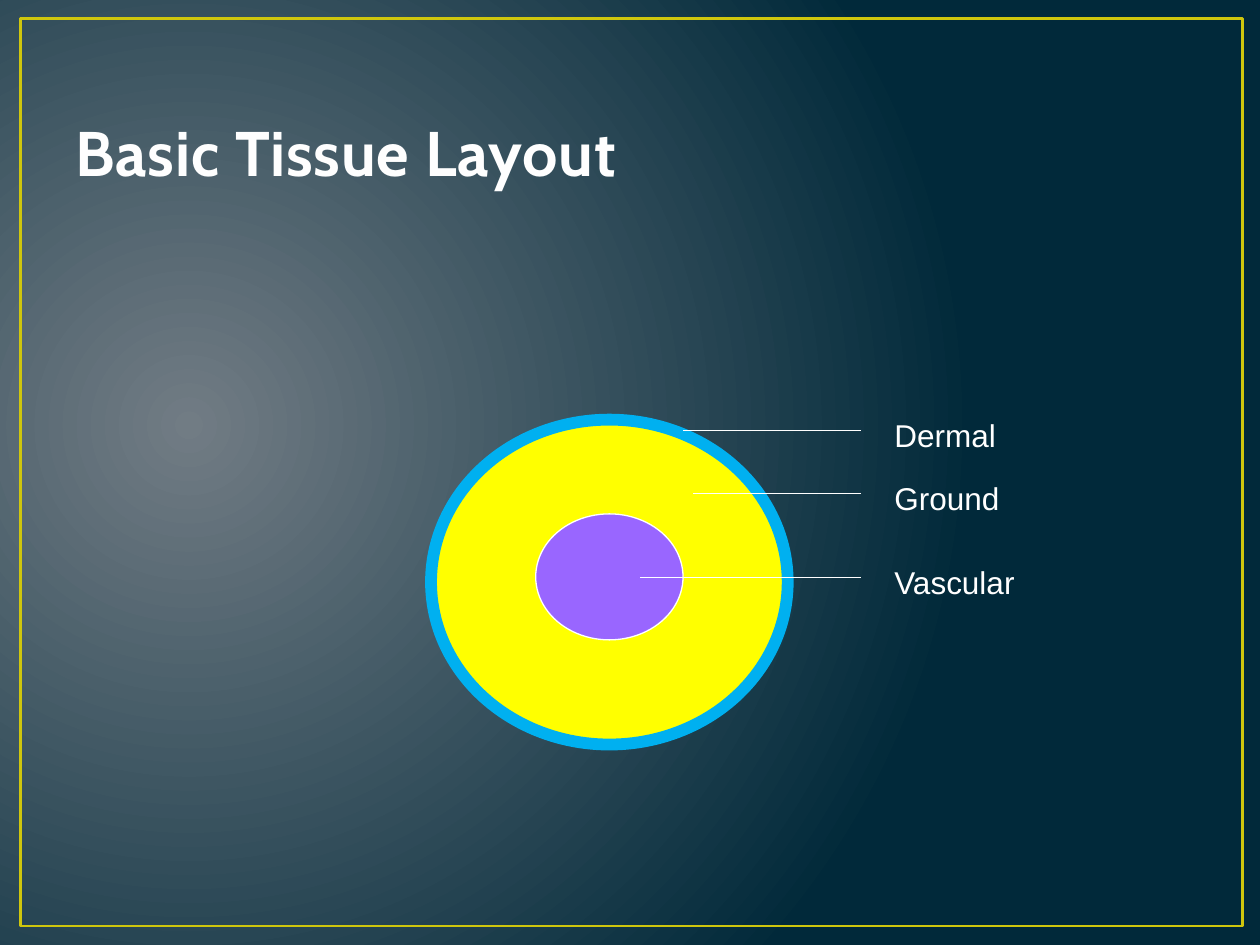
from lxml import etree
from pptx import Presentation
from pptx.dml.color import RGBColor
from pptx.enum import shapes, text
from pptx.oxml import ns
from pptx.util import Cm, Pt

HUES = {
    "glow": "717C84",
    "night": "01293A",
    "frame": "CFC60D",
    "title": "FEFEFE",
    "white": "FFFFFF",
    "dermal": "00B0F0",
    "ground": "FFFF00",
    "core": "9966FF",
}


class Deck:
    def __init__(self, wide, high):
        self.show = Presentation()
        self.show.slide_width = Cm(wide)
        self.show.slide_height = Cm(high)
        self.slide = self.show.slides.add_slide(self.show.slide_layouts[6])

    def hue(self, name):
        return RGBColor.from_string(HUES[name])

    def glow(self, hues, left, top, right, bottom):
        fill = self.slide.background.fill
        fill.gradient()
        for place, (stop, name) in enumerate(zip(fill.gradient_stops, hues)):
            stop.position = place
            stop.color.rgb = self.hue(name)
        grad = self.slide.element.find(".//" + ns.qn("a:gradFill"))
        grad.remove(grad.find(ns.qn("a:lin")))
        ring = etree.SubElement(grad, ns.qn("a:path"))
        ring.set("path", "circle")
        rect = etree.SubElement(ring, ns.qn("a:fillToRect"))
        for side, part in zip("ltrb", (left, top, right, bottom)):
            rect.set(side, str(part * 1000))

    def shape(self, kind, box, edge, width, fill=None):
        item = self.slide.shapes.add_shape(kind, *map(Cm, box))
        item.shadow.inherit = False
        if fill:
            item.fill.solid()
            item.fill.fore_color.rgb = self.hue(fill)
        else:
            item.fill.background()
        item.line.color.rgb = self.hue(edge)
        item.line.width = Pt(width)

    def line(self, start, end, y):
        item = self.slide.shapes.add_connector(
            shapes.MSO_CONNECTOR.STRAIGHT, Cm(start), Cm(y), Cm(end), Cm(y))
        item.line.color.rgb = self.hue("white")
        item.line.width = Pt(0.75)
        etree.SubElement(item._element.spPr, ns.qn("a:effectLst"))

    def text(self, words, box, size, face, hue, bold=False, low=False, gap=0):
        frame = self.slide.shapes.add_textbox(*map(Cm, box)).text_frame
        frame.word_wrap = True
        frame.text = words
        if low:
            frame.vertical_anchor = text.MSO_ANCHOR.BOTTOM
        run = frame.paragraphs[0].runs[0]
        run.font.size = Pt(size)
        run.font.name = face
        run.font.bold = bold
        run.font.color.rgb = self.hue(hue)
        if gap:
            run.font._element.set("spc", str(gap))


def main():
    deck = Deck(25.4, 19.05)
    deck.glow(("glow", "night"), 15, 50, 85, 60)
    deck.shape(shapes.MSO_SHAPE.RECTANGLE, (0.41, 0.38, 24.64, 18.29), "frame", 1.5)
    deck.text("Basic Tissue Layout", (1.27, 0.76, 22.86, 3.18), 36, "Cabin",
              "title", bold=True, low=True, gap=50)

    oval = shapes.MSO_SHAPE.OVAL
    deck.shape(oval, (8.69, 8.46, 7.19, 6.55), "dermal", 6.75, "ground")
    deck.shape(oval, (10.8, 10.36, 2.97, 2.54), "white", 0.75, "core")

    tissues = (("Dermal", 13.77, 8.68), ("Ground", 13.97, 9.95), ("Vascular", 12.9, 11.64))
    for name, start, y in tissues:
        deck.line(start, 17.35, y)
        deck.text(name, (17.78, y - 0.42, 4.02, 1.02), 18, "Arial", "white")

    deck.show.save("out.pptx")


if __name__ == "__main__":
    main()
